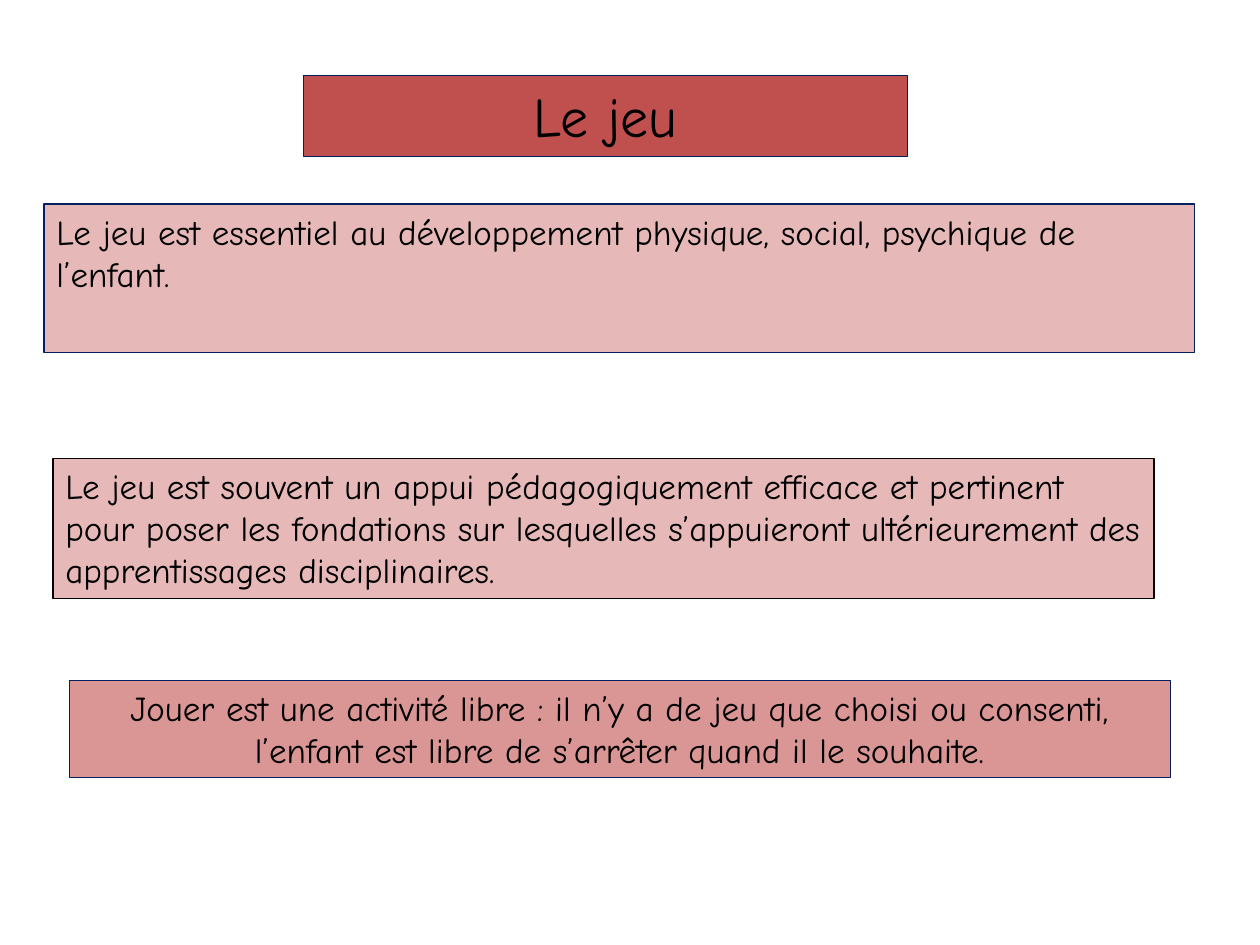
"""Build a slide on play in child development."""
from pptx import Presentation
from pptx import util as u
from pptx.dml.color import RGBColor
from pptx.enum import shapes, text

FONT = "Comic Neue"
NAVY, BLACK = "002060", "000000"
TITLE = ("Le jeu", (2.41, 0.6, 4.79, 0.64))
STATEMENTS = [
    ("Le jeu est essentiel au développement physique, social, psychique de l’enfant.",
     (0.35, 1.62, 9.13, 1.18), dict(fill="E6B9B8")),
    ("Jouer est une activité libre : il n’y a de jeu que choisi ou consenti, "
     "l’enfant est libre de s’arrêter quand il le souhaite.",
     (0.55, 5.4, 8.74, 0.77), dict(fill="D99694", centred=True)),
    ("Le jeu est souvent un appui pédagogiquement efficace et pertinent pour poser "
     "les fondations sur lesquelles s’appuieront ultérieurement des apprentissages "
     "disciplinaires.",
     (0.42, 3.64, 8.74, 1.11), dict(fill="E6B9B8", line=BLACK)),
]


def colour(value):
    return RGBColor.from_string(value)


def write_box(shape, content, *, fill, line=NAVY, size=20, centred=False):
    shape.fill.solid()
    shape.fill.fore_color.rgb = colour(fill)
    shape.line.color.rgb = colour(line)
    shape.line.width = u.Pt(0.75)
    frame = shape.text_frame
    frame.word_wrap = True
    frame.auto_size = text.MSO_AUTO_SIZE.NONE
    frame.vertical_anchor = text.MSO_ANCHOR.TOP
    paragraph = frame.paragraphs[0]
    paragraph.alignment = text.PP_ALIGN.CENTER if centred else text.PP_ALIGN.LEFT
    run = paragraph.add_run()
    run.text = content
    run.font.name = FONT
    run.font.size = u.Pt(size)
    run.font.color.rgb = colour(BLACK)


def main():
    presentation = Presentation()
    presentation.slide_width, presentation.slide_height = u.Inches(10), u.Inches(7.5)
    slide = presentation.slides.add_slide(presentation.slide_layouts[5])

    content, position = TITLE
    title = slide.shapes.title
    title.left, title.top, title.width, title.height = map(u.Inches, position)
    write_box(title, content, fill="C0504D", size=32, centred=True)

    for content, position, style in STATEMENTS:
        box = slide.shapes.add_shape(shapes.MSO_SHAPE.RECTANGLE, *map(u.Inches, position))
        box.shadow.inherit = False
        write_box(box, content, **style)

    presentation.save("out.pptx")


if __name__ == "__main__":
    main()
